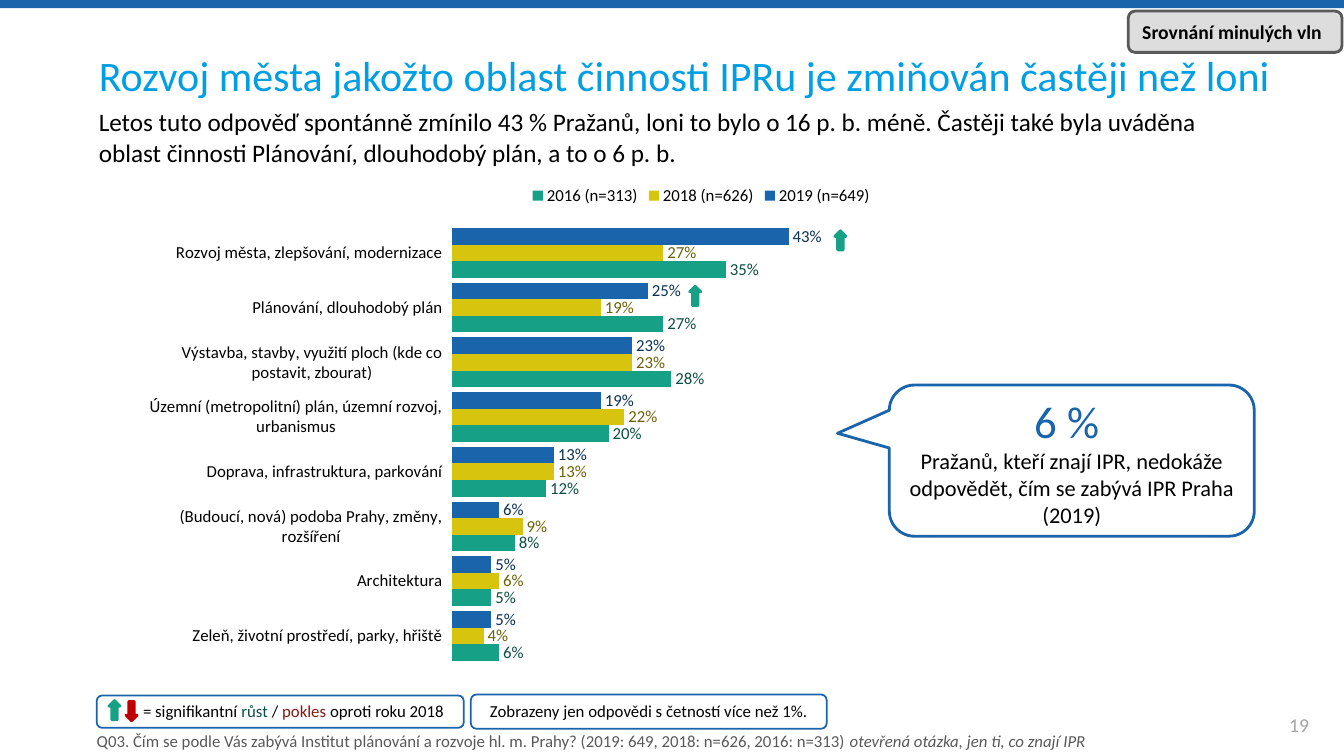
"""Builds the survey slide on spontaneously named IPR activities, with a comparison of three waves."""
import pptx
import pptx.chart.data
import pptx.dml.color
import pptx.enum.chart
import pptx.enum.shapes
import pptx.enum.text
import pptx.oxml
import pptx.oxml.ns
import pptx.util

Inches = pptx.util.Inches
Pt = pptx.util.Pt
RGB = pptx.dml.color.RGBColor.from_string
SHAPE = pptx.enum.shapes.MSO_SHAPE
ALIGN = pptx.enum.text.PP_ALIGN
ANCHOR = pptx.enum.text.MSO_ANCHOR

COLORS = {
    "blue": "1964AA", "navy": "0C3255", "yellow": "D6C40F", "olive": "6B6208",
    "green": "16A085", "forest": "0B5043", "red": "C00000", "maroon": "821B10",
    "title": "009FE3", "black": "000000", "gray": "595959", "pale": "A6A6A6",
}

deck = pptx.Presentation()
deck.slide_width, deck.slide_height = Inches(13.33), Inches(7.5)
slide = deck.slides.add_slide(deck.slide_layouts[6])


def add_panel(kind, box, fill=None, line=None, width=1.25):
    """Adds a preset shape with its fill and outline."""
    panel = slide.shapes.add_shape(kind, *map(Inches, box))
    panel.shadow.inherit = False
    if fill:
        panel.fill.solid()
        panel.fill.fore_color.rgb = RGB(COLORS[fill])
    else:
        panel.fill.background()
    if line:
        panel.line.color.rgb = RGB(COLORS[line])
        panel.line.width = Pt(width)
    else:
        panel.line.fill.background()
    return panel


def add_text(box, paragraphs, host=None, align=ALIGN.LEFT, anchor=ANCHOR.MIDDLE,
             insets=(0.1, 0.05, 0.1, 0.05)):
    """Writes paragraphs of (size, [(text, color), ...]) in a host shape or a new text box."""
    host = host or slide.shapes.add_textbox(*map(Inches, box))
    frame = host.text_frame
    frame.word_wrap = True
    frame.vertical_anchor = anchor
    frame.margin_left, frame.margin_top, frame.margin_right, frame.margin_bottom = map(Inches, insets)
    for index, (size, runs) in enumerate(paragraphs):
        paragraph = frame.add_paragraph() if index else frame.paragraphs[0]
        paragraph.alignment = align
        paragraph.font.size = Pt(size)
        paragraph.font.name = "Calibri"
        if len({color for _, color in runs}) == 1:
            paragraph.font.color.rgb = RGB(COLORS[runs[0][1]])
        for text, color in runs:
            run = paragraph.add_run()
            run.text = text
            if len({name for _, name in runs}) > 1:
                run.font.color.rgb = RGB(COLORS[color])
    return frame


add_panel(SHAPE.RECTANGLE, (0, 0, 13.33, 0.08), fill="blue")

answers = pptx.chart.data.CategoryChartData(number_format="0%")
answers.categories = [
    "Rozvoj města, zlepšování, modernizace",
    "Plánování, dlouhodobý plán",
    "Výstavba, stavby, využití ploch (kde co postavit, zbourat)",
    "Územní (metropolitní) plán, územní rozvoj, urbanismus",
    "Doprava, infrastruktura, parkování",
    "(Budoucí, nová) podoba Prahy, změny, rozšíření",
    "Architektura",
    "Zeleň, životní prostředí, parky, hřiště",
]
waves = [
    ("2019 (n=649)", (0.43, 0.25, 0.23, 0.19, 0.13, 0.06, 0.05, 0.05), "blue", "navy"),
    ("2018 (n=626)", (0.27, 0.19, 0.23, 0.22, 0.13, 0.09, 0.06, 0.04), "yellow", "olive"),
    ("2016 (n=313)", (0.35, 0.27, 0.28, 0.2, 0.12, 0.08, 0.05, 0.06), "green", "forest"),
]
for wave, shares, _, _ in waves:
    answers.add_series(wave, shares)
chart = slide.shapes.add_chart(
    pptx.enum.chart.XL_CHART_TYPE.BAR_CLUSTERED,
    Inches(1.47), Inches(1.73), Inches(10.97), Inches(5.08), answers).chart
chart.has_title = False
chart.font.name = "Calibri"
chart.font.size = Pt(10.5)
chart.font.color.rgb = RGB(COLORS["black"])
chart.has_legend = True
chart.legend.position = pptx.enum.chart.XL_LEGEND_POSITION.TOP
chart.legend.include_in_layout = False
chart.legend.font.size = Pt(12)

topics = chart.category_axis
topics.reverse_order = True
topics.tick_labels.font.size = Pt(12)
topics.format.line.fill.background()
chart.value_axis.minimum_scale = 0
chart.value_axis.maximum_scale = 1
chart.value_axis.has_major_gridlines = False
chart.value_axis.visible = False

bars = chart.plots[0]
bars.gap_width = 30
bars.overlap = 0
bars.vary_by_categories = False
for series, (_, _, fill, ink) in zip(bars.series, waves):
    series.format.fill.solid()
    series.format.fill.fore_color.rgb = RGB(COLORS[fill])
    labels = series.data_labels
    labels.show_value = True
    labels.position = pptx.enum.chart.XL_LABEL_POSITION.OUTSIDE_END
    labels.number_format = "0%"
    labels.number_format_is_linked = False
    labels.font.size = Pt(12)
    labels.font.color.rgb = RGB(COLORS[ink])

plot_area = chart.element.find(".//" + pptx.oxml.ns.qn("c:plotArea"))
for old_layout in plot_area.findall(pptx.oxml.ns.qn("c:layout")):
    plot_area.remove(old_layout)
plot_area.insert(0, pptx.oxml.parse_xml(
    f'<c:layout {pptx.oxml.ns.nsdecls("c")}><c:manualLayout><c:layoutTarget val="inner"/>'
    '<c:xMode val="edge"/><c:yMode val="edge"/><c:x val="0.275"/><c:y val="0.1"/>'
    '<c:w val="0.707"/><c:h val="0.855"/></c:manualLayout></c:layout>'))

add_text((0, 1.06, 13.33, 0.84), [(18, [(
    "Letos tuto odpověď spontánně zmínilo 43 % Pražanů, loni to bylo o 16 p. b. méně. "
    "Častěji také byla uváděna oblast činnosti Plánování, dlouhodobý plán, a to o 6 p. b.",
    "black")])], anchor=ANCHOR.TOP, insets=(0.98, 0, 0.98, 0))
add_text((0, 0.41, 13.33, 0.67), [(30, [(
    "Rozvoj města jakožto oblast činnosti IPRu je zmiňován častěji než loni", "title")])],
    insets=(0.98, 0, 0, 0))
add_text((12.44, 6.99, 0.89, 0.4), [(14, [("19", "pale")])], align=ALIGN.CENTER)
question = add_text((0.96, 7.2, 10.06, 0.3), [(12, [
    ("Q03. Čím se podle Vás zabývá Institut plánování a rozvoje hl. m. Prahy? "
     "(2019: 649, 2018: n=626, 2016: n=313) ", "gray"),
    ("otevřená otázka, jen ti, co znají IPR", "gray")])], insets=(0, 0, 0, 0))
question.paragraphs[0].runs[1].font.italic = True

threshold = add_panel(SHAPE.ROUNDED_RECTANGLE, (4.67, 6.89, 3.53, 0.34), line="blue")
add_text(None, [(12, [("Zobrazeny jen odpovědi s četností více než 1%.", "black")])],
         host=threshold, align=ALIGN.CENTER, anchor=ANCHOR.TOP)

callout = add_panel(SHAPE.ROUNDED_RECTANGULAR_CALLOUT, (8.82, 3.82, 3.62, 1.5), line="blue", width=2)
for index, value in enumerate((-0.642, -0.181, 0.167)):
    callout.adjustments[index] = value
add_text(None, [
    (32, [("6 % ", "blue")]),
    (16, [("Pražanů, kteří znají IPR, nedokáže odpovědět, čím se zabývá IPR Praha (2019)", "black")]),
], host=callout, align=ALIGN.CENTER)

add_panel(SHAPE.ROUNDED_RECTANGLE, (0.96, 6.9, 3.64, 0.32), line="blue")
add_text((1.32, 6.9, 4.22, 0.3), [(12, [
    ("= signifikantní ", "black"), ("růst", "forest"), (" / ", "black"),
    ("pokles ", "maroon"), ("oproti roku 2018", "black")])], anchor=ANCHOR.TOP)
for left, top, color, turn in [
    (8.28, 2.29, "green", 180), (6.84, 2.84, "green", 180),
    (1.08, 6.95, "green", 180), (1.25, 6.96, "red", 0),
]:
    trend = add_panel(SHAPE.DOWN_ARROW, (left, top, 0.11, 0.19), fill=color, line=color, width=2)
    trend.rotation = turn

badge = add_panel(SHAPE.ROUNDED_RECTANGLE, (11.19, 0.11, 2.12, 0.41), fill="gray", line="gray", width=2)
tint = badge.element.spPr.find(pptx.oxml.ns.qn("a:solidFill"))[0]
tint.append(pptx.oxml.parse_xml(f'<a:alpha {pptx.oxml.ns.nsdecls("a")} val="20000"/>'))
comparison = add_text((11.19, 0.13, 2.06, 0.37), [(14, [("Srovnání minulých vln", "black")])],
                      align=ALIGN.CENTER)
comparison.paragraphs[0].font.bold = True

deck.save("out.pptx")
